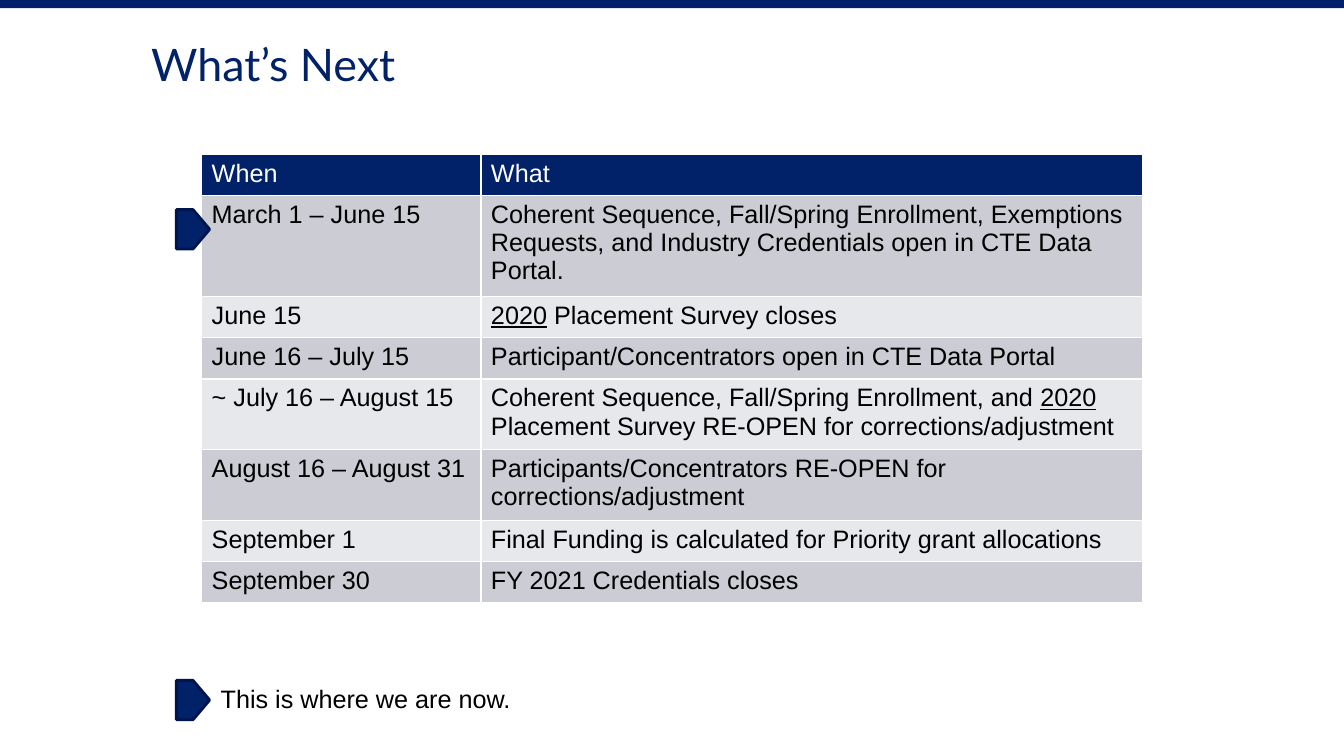
"""Build the "What's Next" slide: a reporting calendar with a marker on the current period."""
import pptx
import pptx.dml.color
import pptx.enum.shapes
import pptx.util
from pptx.util import Inches

TITLE = "What’s Next"
LEGEND = "This is where we are now."
UNDERLINED = "2020"
SCHEDULE = [
    ("When", "What"),
    ("March 1 – June 15", "Coherent Sequence, Fall/Spring Enrollment, Exemptions Requests, "
     "and Industry Credentials open in CTE Data Portal."),
    ("June 15", "2020 Placement Survey closes"),
    ("June 16 – July 15", "Participant/Concentrators open in CTE Data Portal"),
    ("~ July 16 – August 15", "Coherent Sequence, Fall/Spring Enrollment, and 2020 "
     "Placement Survey RE-OPEN for corrections/adjustment"),
    ("August 16 – August 31", "Participants/Concentrators RE-OPEN for corrections/adjustment"),
    ("September 1", "Final Funding is calculated for Priority grant allocations"),
    ("September 30", "FY 2021 Credentials closes"),
]
COLUMN_WIDTHS = (2.77, 6.56)
ROW_HEIGHT = 0.41
MARKER_TOPS = (2.08, 6.75)
THEME = {
    "bar": "002069", "navy": "012169", "outline": "00154B", "white": "FFFFFF",
    "black": "000000", "bands": ("E7E8EB", "CCCDD4"),
    "title_font": "Lato", "body_font": "Arial", "title_size": 32, "body_size": 18,
}


def rgb(name):
    return pptx.dml.color.RGBColor.from_string(name)


def paint(target, color):
    target.fill.solid()
    target.fill.fore_color.rgb = rgb(color)


def write(para, text, kind, color):
    before, found, after = text.partition(UNDERLINED)
    for part in filter(None, (before, found, after)):
        span = para.add_run()
        span.text = part
        if part == UNDERLINED:
            span.font.underline = True
    para.font.name = THEME[f"{kind}_font"]
    para.font.size = pptx.util.Pt(THEME[f"{kind}_size"])
    para.font.bold = False
    para.font.color.rgb = rgb(color)


def add_text(page, place, text, kind, color, margin=None):
    box = page.shapes.add_textbox(*map(Inches, place))
    frame = box.text_frame
    frame.word_wrap = True
    if margin is not None:
        frame.margin_left = frame.margin_right = Inches(margin)
        frame.margin_top = frame.margin_bottom = Inches(margin)
    write(frame.paragraphs[0], text, kind, color)


def add_preset(page, preset, place, color):
    shape = page.shapes.add_shape(preset, *map(Inches, place))
    shape.shadow.inherit = False
    paint(shape, color)
    return shape


def add_schedule(page):
    place = (2, 1.53, sum(COLUMN_WIDTHS), ROW_HEIGHT * len(SCHEDULE))
    table = page.shapes.add_table(len(SCHEDULE), len(COLUMN_WIDTHS), *map(Inches, place)).table
    for column, width in zip(table.columns, COLUMN_WIDTHS):
        column.width = Inches(width)
    for row, texts in enumerate(SCHEDULE):
        table.rows[row].height = Inches(ROW_HEIGHT)
        for column, text in enumerate(texts):
            cell = table.cell(row, column)
            paint(cell, THEME["bands"][row % 2] if row else THEME["navy"])
            write(cell.text_frame.paragraphs[0], text, "body",
                  THEME["black"] if row else THEME["white"])


def main():
    deck = pptx.Presentation()
    deck.slide_width, deck.slide_height = Inches(13.33), Inches(7.5)
    page = deck.slides.add_slide(deck.slide_layouts[6])
    presets = pptx.enum.shapes.MSO_SHAPE
    bar = add_preset(page, presets.RECTANGLE, (0, 0, 13.33, 0.08), THEME["bar"])
    bar.line.fill.background()
    add_text(page, (1.5, 0.36, 10.33, 0.54), TITLE, "title", THEME["navy"], margin=0)
    add_schedule(page)
    for top in MARKER_TOPS:
        marker = add_preset(page, presets.PENTAGON, (1.75, top, 0.33, 0.39), THEME["navy"])
        marker.line.color.rgb = rgb(THEME["outline"])
        marker.line.width = pptx.util.Pt(2)
    add_text(page, (2.09, 6.73, 3.11, 0.4), LEGEND, "body", THEME["black"])
    deck.save("out.pptx")


if __name__ == "__main__":
    main()
